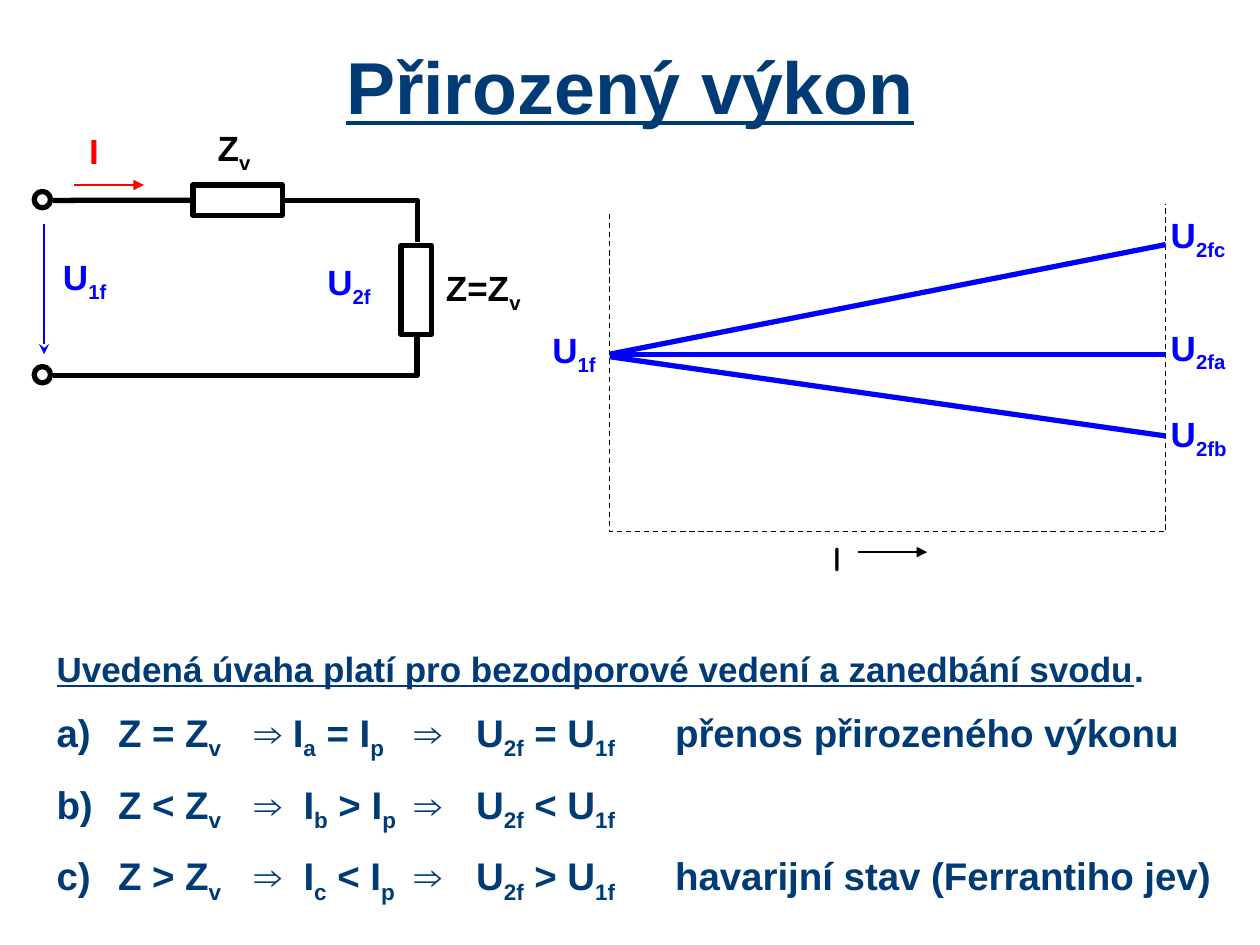
"""Build the slide on natural power: line circuit, voltage diagram and three load cases."""
from typing import NamedTuple, Optional

from pptx import Presentation
from pptx import util as u
from pptx.dml.color import RGBColor
from pptx.enum import dml, shapes, text
from pptx.oxml.ns import qn
from lxml import etree

NAVY = RGBColor(0x00, 0x3B, 0x76)
BLUE = RGBColor(0x00, 0x00, 0xFF)
RED = RGBColor(0xFF, 0x00, 0x00)
BLACK = RGBColor(0x00, 0x00, 0x00)


class Label(NamedTuple):
    content: str
    left: float
    top: float
    width: float
    color: RGBColor = BLUE
    wrap: bool = True
    align: text.PP_ALIGN = text.PP_ALIGN.LEFT
    font: str = "Arial"


class Line(NamedTuple):
    x1: float
    y1: float
    x2: float
    y2: float
    color: RGBColor = BLUE
    weight: float = 3
    head: Optional[str] = None


class Part(NamedTuple):
    kind: shapes.MSO_SHAPE
    left: float
    top: float
    width: float
    height: float
    rotation: float = 0


SOURCE_IMPEDANCE = Part(shapes.MSO_SHAPE.RECTANGLE, 3.89, 3.73, 1.8, 0.61)
PARTS = [
    Part(shapes.MSO_SHAPE.RECTANGLE, 7.49, 5.54, 1.8, 0.61, 90),
    Part(shapes.MSO_SHAPE.OVAL, 0.69, 3.86, 0.33, 0.33),
    Part(shapes.MSO_SHAPE.OVAL, 0.69, 7.39, 0.33, 0.33),
]
INPUT_WIRE = Line(1.07, 4.04, 3.89, 4.04, BLACK)
LOAD_WIRE = Line(5.74, 4.04, 8.41, 4.88, BLACK)
RETURN_WIRE = Line(4.34, 3.51, 5.13, 10.85, BLACK)
FRAME = [(12.29, 4.32), (12.29, 10.72), (23.5, 10.72), (23.5, 4.11)]
LINES = [
    Line(0.89, 4.52, 0.89, 7.14, BLUE, 1, "stealth"),
    Line(1.5, 3.73, 2.9, 3.73, RED, 1, "triangle"),
    Line(17.3, 11.13, 18.69, 11.13, BLACK, 1, "triangle"),
    Line(12.29, 7.14, 23.5, 7.14),
    Line(12.29, 7.14, 23.5, 4.93),
    Line(12.29, 7.19, 23.5, 8.79),
]
LABELS = [
    Label("I", 1.7, 2.51, 0.41, RED, False),
    Label("U|1f", 1.17, 5.11, 1.73),
    Label("Z=Z|v", 8.89, 5.33, 1.73, BLACK, False),
    Label("Z|v", 4.29, 2.51, 0.89, BLACK, False),
    Label("U|2f", 6.5, 5.21, 1.32),
    Label("U|1f", 10.64, 6.58, 1.47, align=text.PP_ALIGN.RIGHT),
    Label("U|2fc", 23.5, 4.27, 1.83),
    Label("U|2fa", 23.5, 6.53, 1.83),
    Label("U|2fb", 23.5, 8.28, 1.83),
    Label("l", 16.69, 10.72, 0.41, BLACK, False, font="Comic Neue"),
]
TABS = [1.24, 3.99, 4.98, 7.21, 8.46, 12.47]
CASES = [
    "a)\tZ = Z|v|\t⇒ I|a| = I|p|\t⇒\tU|2f| = U|1f|\tpřenos přirozeného výkonu",
    "b)\tZ < Z|v|\t⇒\tI|b| > I|p|\t⇒\tU|2f| < U|1f",
    "c)\tZ > Z|v|\t⇒\tI|c| < I|p|\t⇒\tU|2f| > U|1f|\thavarijní stav (Ferrantiho jev)",
]


def set_font(p, size: float, color: RGBColor, name: str = "Arial") -> None:
    p.font.size, p.font.name, p.font.bold = u.Pt(size), name, True
    p.font.color.rgb = color


def add_runs(p, content: str) -> None:
    """Write text whose parts between bars alternate normal and subscript."""
    for i, part in enumerate(content.split("|")):
        r = p.add_run()
        r.text = part
        if i % 2:
            r._r.get_or_add_rPr().set("baseline", "-25000")


def add_box(s, left: float, top: float, width: float, height: float):
    tf = s.shapes.add_textbox(u.Cm(left), u.Cm(top), u.Cm(width), u.Cm(height)).text_frame
    tf.word_wrap = True
    return tf


def add_label(s, label: Label) -> None:
    tf = add_box(s, label.left, label.top, label.width, 1.05)
    tf.word_wrap = label.wrap
    tf.vertical_anchor = text.MSO_ANCHOR.MIDDLE
    tf.margin_left = tf.margin_right = tf.margin_top = tf.margin_bottom = u.Cm(0.1)
    p = tf.paragraphs[0]
    p.alignment = label.align
    set_font(p, 20, label.color, label.font)
    add_runs(p, label.content)


def add_part(s, part: Part):
    sp = s.shapes.add_shape(part.kind, u.Cm(part.left), u.Cm(part.top),
                            u.Cm(part.width), u.Cm(part.height))
    sp.rotation = part.rotation
    sp.shadow.inherit = False
    sp.fill.background()
    sp.line.color.rgb, sp.line.width = BLACK, u.Pt(3)
    return sp


def add_line(s, line: Line, kind=shapes.MSO_CONNECTOR.STRAIGHT):
    sp = s.shapes.add_connector(kind, u.Cm(line.x1), u.Cm(line.y1),
                                u.Cm(line.x2), u.Cm(line.y2))
    sp.line.color.rgb, sp.line.width = line.color, u.Pt(line.weight)
    if line.head:
        etree.SubElement(sp.line._get_or_add_ln(), qn("a:tailEnd"), type=line.head)
    etree.SubElement(sp._element.spPr, qn("a:effectLst"))
    return sp


def add_corner(s, line: Line, rotation: int = 0) -> None:
    """Draw a connector with a single right-angled bend."""
    spPr = add_line(s, line, shapes.MSO_CONNECTOR.ELBOW)._element.spPr
    spPr.find(qn("a:prstGeom")).set("prst", "bentConnector2")
    spPr.find(qn("a:xfrm")).set("rot", str(rotation * 60000))


def add_frame(s) -> None:
    points = [(u.Cm(x), u.Cm(y)) for x, y in FRAME]
    builder = s.shapes.build_freeform(*points[0])
    builder.add_line_segments(points[1:], close=False)
    sp = builder.convert_to_shape()
    sp.shadow.inherit = False
    sp.fill.background()
    sp.line.color.rgb, sp.line.width = BLACK, u.Pt(0.75)
    sp.line.dash_style = dml.MSO_LINE.DASH


def add_title(s) -> None:
    tf = add_box(s, 1.27, 0.53, 22.86, 2.39)
    tf.vertical_anchor = text.MSO_ANCHOR.MIDDLE
    p = tf.paragraphs[0]
    p.alignment = text.PP_ALIGN.CENTER
    set_font(p, 42, NAVY)
    p.font.underline = True
    add_runs(p, "Přirozený výkon")


def add_cases(s) -> None:
    tf = add_box(s, 0.89, 12.93, 24.21, 5.36)
    p = tf.paragraphs[0]
    set_font(p, 20, NAVY)
    add_runs(p, "Uvedená úvaha platí pro bezodporové vedení a zanedbání svodu")
    p.runs[0].font.underline = True
    add_runs(p, ".")
    for case in CASES:
        p = tf.add_paragraph()
        p.space_before = u.Pt(11)
        set_font(p, 22, NAVY)
        pPr = p._p.get_or_add_pPr()
        tabs = etree.Element(qn("a:tabLst"))
        for tab in TABS:
            etree.SubElement(tabs, qn("a:tab"), pos=str(u.Cm(tab)), algn="l")
        pPr.find(qn("a:defRPr")).addprevious(tabs)
        add_runs(p, case)


def main() -> None:
    prs = Presentation()
    prs.slide_width, prs.slide_height = u.Cm(25.4), u.Cm(19.05)
    s = prs.slides.add_slide(prs.slide_layouts[6])
    add_title(s)
    add_cases(s)
    impedance = add_part(s, SOURCE_IMPEDANCE)
    for part in PARTS:
        add_part(s, part)
    add_line(s, INPUT_WIRE).end_connect(impedance, 1)
    add_corner(s, LOAD_WIRE)
    add_corner(s, RETURN_WIRE, 90)
    add_frame(s)
    for line in LINES:
        add_line(s, line)
    for label in LABELS:
        add_label(s, label)
    prs.save("out.pptx")


if __name__ == "__main__":
    main()
